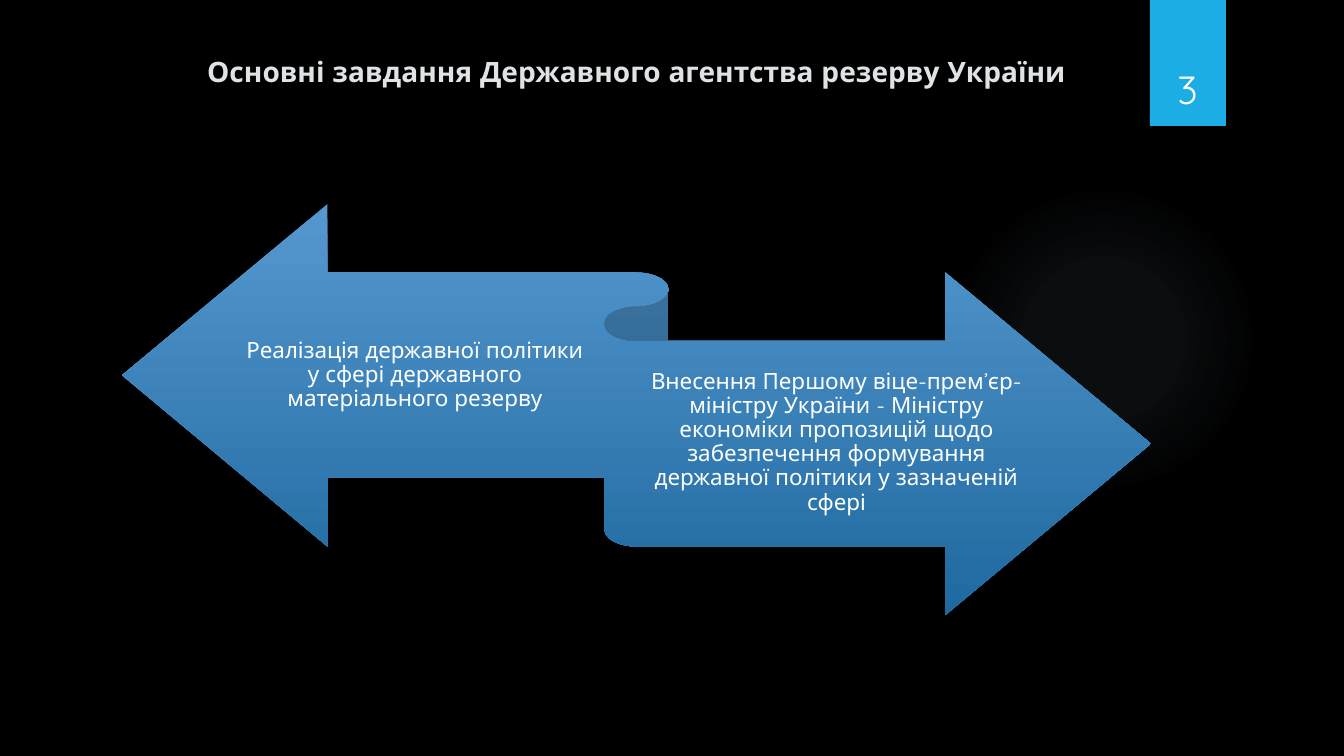
from dataclasses import dataclass

from lxml import etree
from pptx import Presentation
from pptx.dml.color import RGBColor
from pptx.enum.shapes import MSO_SHAPE
from pptx.enum.text import MSO_ANCHOR, PP_ALIGN
from pptx.oxml.ns import qn
from pptx.util import Emu, Pt

ELLIPSE = MSO_SHAPE.OVAL
RECTANGLE = MSO_SHAPE.RECTANGLE
RIBBON = MSO_SHAPE.LEFT_RIGHT_RIBBON
TOP = MSO_ANCHOR.TOP
MIDDLE = MSO_ANCHOR.MIDDLE
BOTTOM = MSO_ANCHOR.BOTTOM
CENTER = PP_ALIGN.CENTER

SLIDE_WIDTH, SLIDE_HEIGHT = 1344, 756
EMU_PER_PX = 12192000 / SLIDE_WIDTH
FONT = "Quicksand"
COLORS = {
    "background": "000000",
    "glow": "A0C1D5",
    "tab": "1CADE4",
    "title": "DFE3E5",
    "ribbon_top": "5598CF",
    "ribbon_bottom": "1E699F",
    "white": "FFFFFF",
}
LINEAR_DOWN = ("lin", {"ang": "5400000", "scaled": "0"})
RADIAL = ("path", {"path": "circle"})


@dataclass(frozen=True)
class Box:
    left: int
    top: int
    width: int
    height: int


@dataclass(frozen=True)
class Stop:
    position: int
    color: str
    opacity: int = 100


@dataclass(frozen=True)
class Label:
    box: Box
    text: str
    size: int
    anchor: MSO_ANCHOR
    color: str = "white"
    bold: bool = False
    line_spacing: float = 1.0
    insets: tuple[int, int, int, int] = (10, 5, 10, 5)


RIBBON_INSETS = (0, 6, 0, 7)
LABELS = [
    Label(Box(122, 50, 1029, 57), "Основні завдання Державного агентства резерву України",
          20, TOP, color="title", bold=True),
    Label(Box(245, 275, 340, 202),
          "Реалізація державної політики у сфері державного матеріального резерву",
          16, MIDDLE, line_spacing=0.9, insets=RIBBON_INSETS),
    Label(Box(636, 342, 401, 202),
          "Внесення Першому віце-прем’єр-міністру України - Міністру економіки пропозицій "
          "щодо забезпечення формування державної політики у зазначеній сфері",
          16, MIDDLE, line_spacing=0.9, insets=RIBBON_INSETS),
    Label(Box(1141, 32, 93, 85), "3", 28, BOTTOM),
]


def px(value: int) -> Emu:
    return Emu(round(value * EMU_PER_PX))


def frame(box: Box) -> list[Emu]:
    return [px(value) for value in (box.left, box.top, box.width, box.height)]


def rgb(name: str) -> RGBColor:
    return RGBColor.from_string(COLORS[name])


def add_plain_shape(slide, kind: MSO_SHAPE, box: Box):
    shape = slide.shapes.add_shape(kind, *frame(box))
    shape.shadow.inherit = False
    shape.line.fill.background()
    return shape


def fill_gradient(shape, stops: list[Stop], direction: tuple[str, dict[str, str]]) -> None:
    shape.fill.background()
    properties = shape.element.spPr
    gradient = etree.Element(qn("a:gradFill"), rotWithShape="1")
    stop_list = etree.SubElement(gradient, qn("a:gsLst"))
    for stop in stops:
        entry = etree.SubElement(stop_list, qn("a:gs"), pos=str(stop.position * 1000))
        color = etree.SubElement(entry, qn("a:srgbClr"), val=COLORS[stop.color])
        if stop.opacity < 100:
            etree.SubElement(color, qn("a:alpha"), val=str(stop.opacity * 1000))
    tag, attributes = direction
    course = etree.SubElement(gradient, qn(f"a:{tag}"), attributes)
    if tag == "path":
        edges = {edge: "50000" for edge in "ltrb"}
        etree.SubElement(course, qn("a:fillToRect"), edges)
    properties.replace(properties.find(qn("a:noFill")), gradient)


def add_label(slide, label: Label) -> None:
    text_frame = slide.shapes.add_textbox(*frame(label.box)).text_frame
    left, top, right, bottom = map(px, label.insets)
    frame_format = {
        "word_wrap": True,
        "vertical_anchor": label.anchor,
        "margin_left": left,
        "margin_top": top,
        "margin_right": right,
        "margin_bottom": bottom,
    }
    for name, value in frame_format.items():
        setattr(text_frame, name, value)
    paragraph = text_frame.paragraphs[0]
    paragraph.alignment = CENTER
    paragraph.line_spacing = label.line_spacing
    run = paragraph.add_run()
    run.text = label.text
    font_format = {"name": FONT, "size": Pt(label.size), "bold": label.bold}
    for name, value in font_format.items():
        setattr(run.font, name, value)
    run.font.color.rgb = rgb(label.color)


def main() -> None:
    presentation = Presentation()
    presentation.slide_width = px(SLIDE_WIDTH)
    presentation.slide_height = px(SLIDE_HEIGHT)
    slide = presentation.slides.add_slide(presentation.slide_layouts[6])
    slide.background.fill.solid()
    slide.background.fill.fore_color.rgb = rgb("background")

    glow = add_plain_shape(slide, ELLIPSE, Box(949, 184, 310, 310))
    fill_gradient(glow, [Stop(0, "glow", 7), Stop(36, "glow", 6), Stop(69, "glow", 0)], RADIAL)

    number_tab = add_plain_shape(slide, RECTANGLE, Box(1150, 0, 76, 126))
    number_tab.fill.solid()
    number_tab.fill.fore_color.rgb = rgb("tab")

    ribbon = add_plain_shape(slide, RIBBON, Box(122, 204, 1029, 411))
    fill_gradient(ribbon, [Stop(0, "ribbon_top"), Stop(100, "ribbon_bottom")], LINEAR_DOWN)

    for label in LABELS:
        add_label(slide, label)

    presentation.save("out.pptx")


if __name__ == "__main__":
    main()
